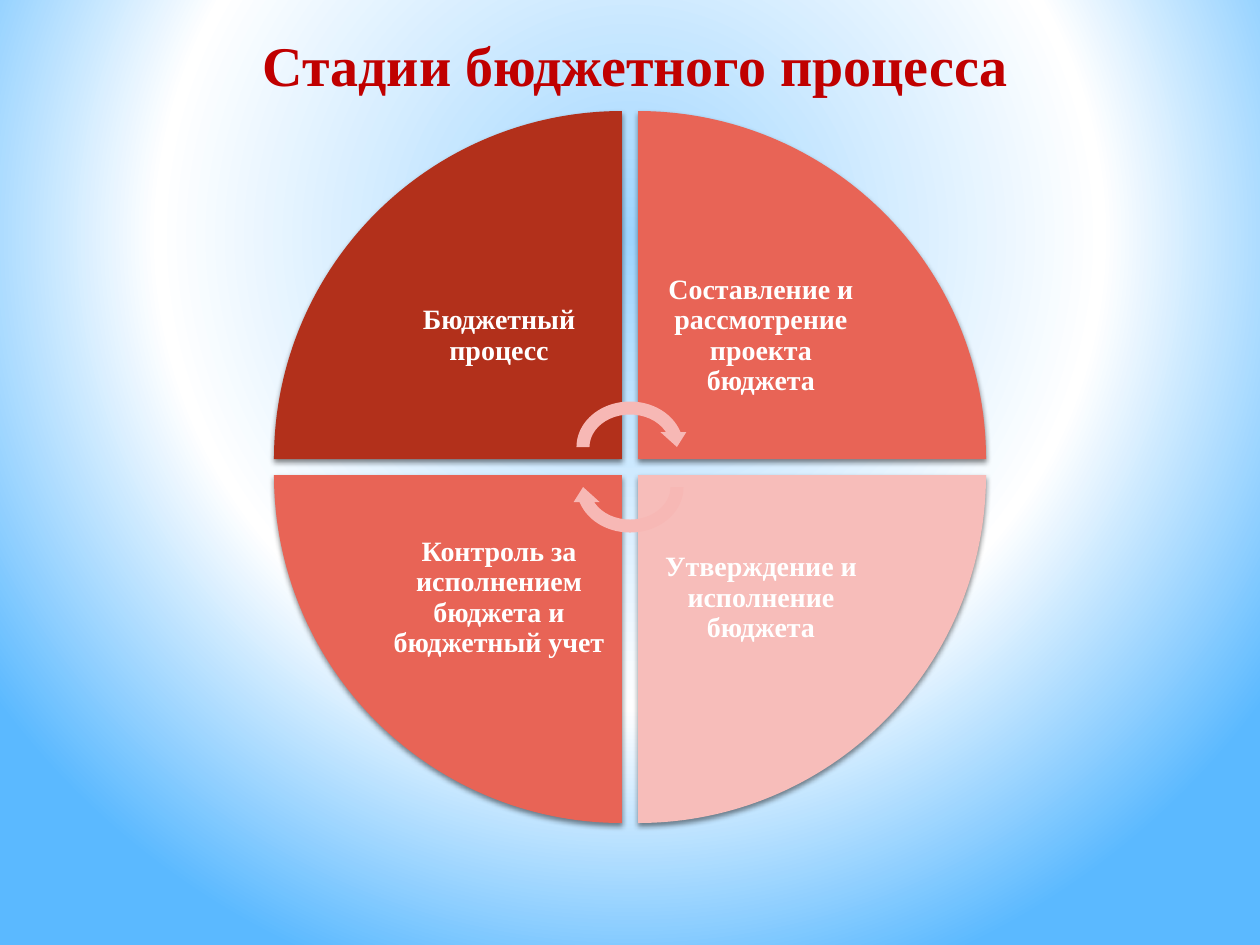
from lxml import etree
from pptx import Presentation
from pptx.dml.color import RGBColor
from pptx.enum.shapes import MSO_SHAPE
from pptx.enum.text import MSO_ANCHOR, MSO_AUTO_SIZE, PP_ALIGN
from pptx.oxml.ns import nsdecls
from pptx.util import Emu, Pt

WEDGE, ARROW = MSO_SHAPE.PIE_WEDGE, MSO_SHAPE.CIRCULAR_ARROW
CENTER, MIDDLE = PP_ALIGN.CENTER, MSO_ANCHOR.MIDDLE
FIT_SHAPE = MSO_AUTO_SIZE.SHAPE_TO_FIT_TEXT
FONT = "Times New Roman"

# Text, colour, column, row and rotation of each quarter, clockwise
STAGES = [
    ("Бюджетный процесс", "B2301B", 0, 0, 0),
    ("Составление и рассмотрение проекта бюджета", "E86456", 1, 0, 90),
    ("Утверждение и исполнение бюджета", "F7BDBA", 1, 1, 180),
    ("Контроль за исполнением бюджета и бюджетный учет", "E86456", 0, 1, 270),
]


def px(n):
    return Emu(round(n * 914400 / 126))


def color(hex_string):
    return RGBColor.from_string(hex_string)


def add_background(slide):
    stops = "".join(
        f'<a:gs pos="{pos * 1000}"><a:srgbClr val="{value}"/></a:gs>'
        for pos, value in [(0, "9ED5FF"), (60, "FFFFFF"), (100, "5BB9FF")])
    background = etree.fromstring(
        f'<p:bg {nsdecls("p", "a")}><p:bgPr><a:gradFill rotWithShape="1">'
        f'<a:gsLst>{stops}</a:gsLst><a:path path="circle">'
        '<a:fillToRect l="20000" t="10000" r="20000" b="60000"/></a:path>'
        '</a:gradFill><a:effectLst/></p:bgPr></p:bg>')
    slide.shapes._spTree.addprevious(background)


def add_text(slide, text, x, y, w, h, size, text_color):
    box = slide.shapes.add_textbox(px(x), px(y), px(w), px(h))
    frame = box.text_frame
    frame.word_wrap = True
    paragraph = frame.paragraphs[0]
    paragraph.text = text
    paragraph.alignment = CENTER
    font = paragraph.font
    font.name, font.size, font.bold = FONT, Pt(size), True
    font.color.rgb = color(text_color)
    return frame


def add_solid(slide, kind, x, y, w, h, fill, rotation):
    shape = slide.shapes.add_shape(kind, px(x), px(y), px(w), px(h))
    shape.shadow.inherit = False
    shape.fill.solid()
    shape.fill.fore_color.rgb = color(fill)
    shape.line.fill.background()
    shape.rotation = rotation
    return shape


def add_shadow(shape):
    effects = shape._element.spPr.find("{*}effectLst")
    effects.append(etree.fromstring(
        f'<a:outerShdw {nsdecls("a")} blurRad="{Pt(3.1)}" dist="{Pt(1.8)}" '
        'dir="5400000" rotWithShape="0"><a:srgbClr val="000000">'
        '<a:alpha val="45000"/></a:srgbClr></a:outerShdw>'))


def add_title(slide, x, y, w, h):
    frame = add_text(slide, "Стадии бюджетного процесса", x, y, w, h, 32, "C00000")
    frame.auto_size = FIT_SHAPE


def add_cycle(slide, x, y, size):
    gap, label_size = 16, 246
    radius = (size - gap) // 2
    step = radius + gap
    inset = radius - label_size

    # Quarters with their labels set against the centre
    for text, fill, column, row, rotation in STAGES:
        left, top = x + column * step, y + row * step
        add_shadow(add_solid(slide, WEDGE, left, top, radius, radius, fill, rotation))
        label = add_text(slide, text, left + inset * (1 - column),
                         top + inset * (1 - row), label_size, label_size,
                         16, "FFFFFF")
        label.vertical_anchor = MIDDLE
        label.margin_left = label.margin_right = px(15)
        label.margin_top = label.margin_bottom = px(15)
        label.paragraphs[0].line_spacing = 0.9

    # Pair of arrows turning around the centre
    arrow_w, arrow_h, offset = 120, 104, 20
    center_x, center_y = x + size / 2, y + size / 2
    for shift, rotation in [(-offset, 0), (offset, 180)]:
        add_solid(slide, ARROW, center_x - arrow_w / 2,
                  center_y + shift - arrow_h / 2, arrow_w, arrow_h,
                  "F7B8B5", rotation)


def main():
    deck = Presentation()
    deck.slide_width, deck.slide_height = px(1260), px(945)
    slide = deck.slides.add_slide(deck.slide_layouts[6])
    add_background(slide)
    add_title(slide, 154, 24, 963, 81)
    add_cycle(slide, 274, 111, 712)
    deck.save("out.pptx")


if __name__ == "__main__":
    main()
